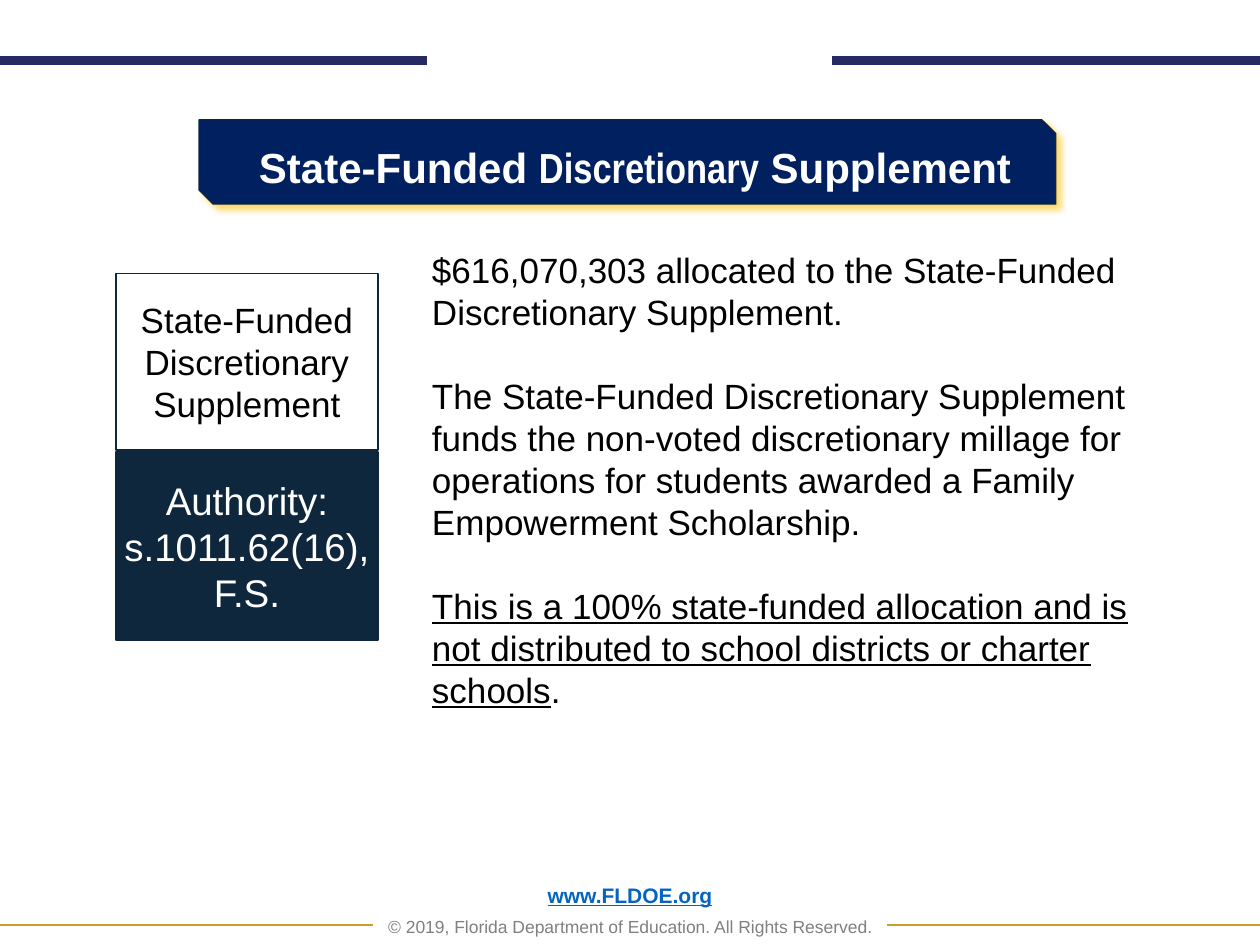
"""Build the State-Funded Discretionary Supplement slide."""
from dataclasses import dataclass
from typing import NamedTuple, Sequence

from lxml.etree import SubElement
from pptx import Presentation
from pptx.dml.color import RGBColor
from pptx.enum.shapes import MSO_CONNECTOR as Connector, MSO_SHAPE as Shape
from pptx.enum.text import MSO_ANCHOR as Anchor, MSO_AUTO_SIZE as AutoSize, PP_ALIGN as Align
from pptx.oxml.ns import qn
from pptx.slide import Slide
from pptx.text.text import TextFrame
from pptx.util import Inches, Pt


@dataclass(frozen=True)
class Theme:
    white: str = "FFFFFF"
    black: str = "000000"
    banner: str = "002060"
    glow: str = "FFD966"
    ink: str = "0F273D"
    navy: str = "262A63"
    gold: str = "CD9D2C"
    link: str = "0563C1"
    grey: str = "808080"
    font: str = "Arial"
    narrow: str = "Arial Narrow"
    title_size: float = 24
    authority_size: float = 22
    body_size: float = 20
    link_size: float = 12
    copyright_size: float = 10
    body_gap: float = 24


THEME = Theme()


class Piece(NamedTuple):
    text: str
    size: float
    color: str
    bold: bool = False
    underline: bool = False
    font: str = THEME.font


class Line(NamedTuple):
    pieces: Sequence[Piece]
    space_before: float = 0
    spacing: float = 1.0


class Rule(NamedTuple):
    start: float
    end: float
    y: float
    color: str
    weight: float


class Card(NamedTuple):
    top: float
    height: float
    fill: str
    color: str
    size: float
    lines: Sequence[str]


RULES = (
    Rule(0, 2.96, 7.34, THEME.gold, 1),
    Rule(0, 3.39, 0.48, THEME.navy, 5),
    Rule(6.6, 10, 0.48, THEME.navy, 5),
    Rule(7.04, 10, 7.34, THEME.gold, 1),
)

CARDS = (
    Card(3.59, 1.49, THEME.ink, THEME.white, THEME.authority_size,
         ("Authority:", "s.1011.62(16),", "F.S.")),
    Card(2.17, 1.4, THEME.white, THEME.black, THEME.body_size,
         ("State-Funded", "Discretionary", "Supplement")),
)


def write_lines(frame: TextFrame, lines: Sequence[Line], align: Align) -> None:
    for index, line in enumerate(lines):
        paragraph = frame.add_paragraph() if index else frame.paragraphs[0]
        paragraph.alignment = align
        paragraph.line_spacing = line.spacing
        paragraph.space_before = Pt(line.space_before)
        for piece in line.pieces:
            run = paragraph.add_run()
            run.text = piece.text
            run.font.name = piece.font
            run.font.size = Pt(piece.size)
            run.font.bold = piece.bold
            run.font.underline = piece.underline
            run.font.color.rgb = RGBColor.from_string(piece.color)


def draw_rule(slide: Slide, rule: Rule) -> None:
    connector = slide.shapes.add_connector(
        Connector.STRAIGHT, Inches(rule.start), Inches(rule.y), Inches(rule.end), Inches(rule.y))
    connector.line.color.rgb = RGBColor.from_string(rule.color)
    connector.line.width = Pt(rule.weight)
    SubElement(connector.element.spPr, qn("a:effectLst"))


def draw_banner(slide: Slide) -> None:
    banner = slide.shapes.add_shape(
        Shape.SNIP_2_DIAG_RECTANGLE, Inches(1.58), Inches(0.95), Inches(6.8), Inches(0.67))
    banner.fill.solid()
    banner.fill.fore_color.rgb = RGBColor.from_string(THEME.banner)
    banner.line.color.rgb = RGBColor.from_string(THEME.ink)
    banner.line.width = Pt(0.75)
    banner.shadow.inherit = False
    effects = banner.element.spPr.find(qn("a:effectLst"))
    shadow = SubElement(effects, qn("a:outerShdw"), blurRad=str(Pt(4)), dist=str(Pt(3)),
                        dir=str(45 * 60000), algn="tl", rotWithShape="0")
    SubElement(shadow, qn("a:srgbClr"), val=THEME.glow)


def place_title(slide: Slide) -> None:
    title = slide.shapes.title
    title.left, title.top = Inches(0.5), Inches(1)
    title.width, title.height = Inches(9.08), Inches(0.58)
    title.text_frame.vertical_anchor = Anchor.BOTTOM
    words = (("State-Funded ", THEME.font), ("Discretionary", THEME.narrow),
             (" Supplement", THEME.font))
    pieces = [Piece(text, THEME.title_size, THEME.white, bold=True, font=font)
              for text, font in words]
    write_lines(title.text_frame, [Line(pieces, spacing=0.9)], Align.CENTER)
    title.element.getparent().append(title.element)


def draw_card(slide: Slide, card: Card) -> None:
    box = slide.shapes.add_shape(
        Shape.RECTANGLE, Inches(0.92), Inches(card.top), Inches(2.08), Inches(card.height))
    box.shadow.inherit = False
    box.fill.solid()
    box.fill.fore_color.rgb = RGBColor.from_string(card.fill)
    box.line.color.rgb = RGBColor.from_string(THEME.ink)
    box.line.width = Pt(1)
    box.text_frame.word_wrap = False
    box.text_frame.vertical_anchor = Anchor.MIDDLE
    lines = [Line([Piece(text, card.size, card.color)]) for text in card.lines]
    write_lines(box.text_frame, lines, Align.CENTER)


def add_text(slide: Slide, left: float, top: float, width: float, height: float,
             lines: Sequence[Line], align: Align, anchor: Anchor, auto_size: AutoSize) -> None:
    box = slide.shapes.add_textbox(Inches(left), Inches(top), Inches(width), Inches(height))
    frame = box.text_frame
    frame.word_wrap = True
    frame.auto_size = auto_size
    frame.vertical_anchor = anchor
    write_lines(frame, lines, align)


def main() -> None:
    deck = Presentation()
    deck.slide_width, deck.slide_height = Inches(10), Inches(7.5)
    slide = deck.slides.add_slide(deck.slide_layouts[5])

    footer = (
        Line([Piece("www.FLDOE.org", THEME.link_size, THEME.link, bold=True, underline=True)],
             spacing=0.9),
        Line([Piece("© 2019, Florida Department of Education. All Rights Reserved.",
                    THEME.copyright_size, THEME.grey)], 6, 0.9),
    )
    add_text(slide, 0.69, 7.06, 8.62, 0.43, footer, Align.CENTER, Anchor.BOTTOM, AutoSize.NONE)
    for rule in RULES:
        draw_rule(slide, rule)
    draw_banner(slide)
    place_title(slide)
    for card in CARDS:
        draw_card(slide, card)

    size, color = THEME.body_size, THEME.black
    body = (
        Line([Piece("$616,070,303 allocated to the State-Funded Discretionary Supplement.",
                    size, color)]),
        Line([Piece("The State-Funded Discretionary Supplement funds the non-voted discretionary "
                    "millage for operations for students awarded a Family Empowerment "
                    "Scholarship.", size, color)], THEME.body_gap),
        Line([Piece("This is a 100% state-funded allocation and is not distributed to school "
                    "districts or charter schools", size, color, underline=True),
              Piece(".", size, color)], THEME.body_gap),
    )
    add_text(slide, 3.33, 1.92, 6.08, 3.8, body, Align.LEFT, Anchor.TOP,
             AutoSize.SHAPE_TO_FIT_TEXT)
    deck.save("out.pptx")


if __name__ == "__main__":
    main()
